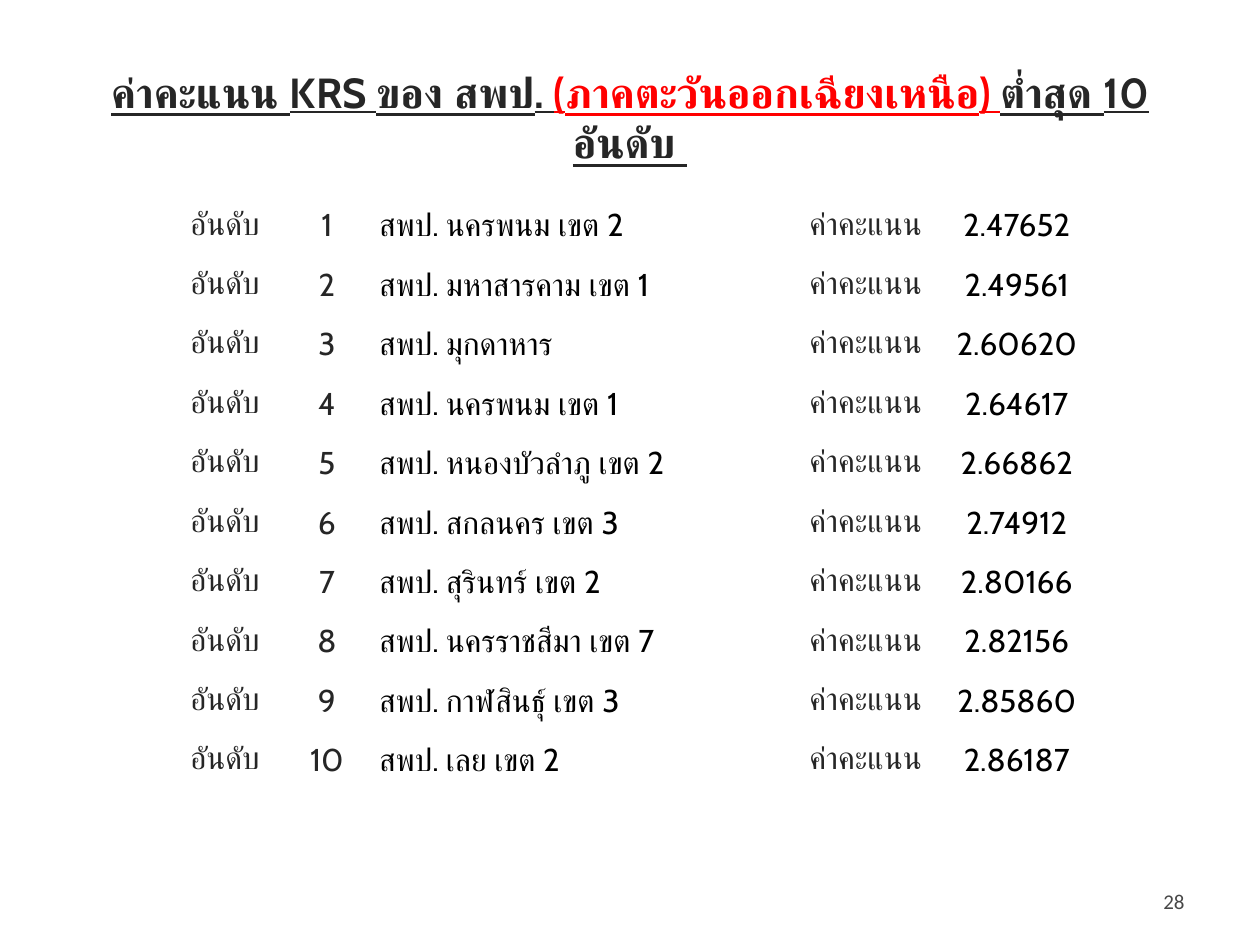
import pptx
import pptx.util
import pptx.dml.color
import pptx.enum.text

Inches = pptx.util.Inches
ALIGN = pptx.enum.text.PP_ALIGN
MIDDLE = pptx.enum.text.MSO_ANCHOR.MIDDLE

COLORS = {"dark": "262626", "black": "000000", "red": "FF0000", "grey": "474747"}

TITLE = [
    ("ค่าคะแนน KRS ของ สพป. ", "dark"),
    ("(ภาคตะวันออกเฉียงเหนือ) ", "red"),
    ("ต่ำสุด 10 อันดับ ", "dark"),
]
SCORES = [
    ("สพป. นครพนม เขต 2", "2.47652"),
    ("สพป. มหาสารคาม เขต 1", "2.49561"),
    ("สพป. มุกดาหาร", "2.60620"),
    ("สพป. นครพนม เขต 1", "2.64617"),
    ("สพป. หนองบัวลำภู เขต 2", "2.66862"),
    ("สพป. สกลนคร เขต 3", "2.74912"),
    ("สพป. สุรินทร์ เขต 2", "2.80166"),
    ("สพป. นครราชสีมา เขต 7", "2.82156"),
    ("สพป. กาฬสินธุ์ เขต 3", "2.85860"),
    ("สพป. เลย เขต 2", "2.86187"),
]
# Width, alignment and colour of each column
COLUMNS = [
    (0.81, ALIGN.CENTER, "dark"),
    (0.81, ALIGN.CENTER, "dark"),
    (3.27, ALIGN.LEFT, "black"),
    (1.2, ALIGN.CENTER, "dark"),
    (1.2, ALIGN.CENTER, "black"),
]


def style(run, size, color, face="Cabin"):
    run.font.name = face
    run.font.size = pptx.util.Pt(size)
    run.font.color.rgb = pptx.dml.color.RGBColor.from_string(COLORS[color])


def place(shape, box):
    shape.left, shape.top, shape.width, shape.height = map(Inches, box)


def add_title(slide, box):
    title = slide.shapes.title
    place(title, box)
    frame = title.text_frame
    frame.auto_size = pptx.enum.text.MSO_AUTO_SIZE.NONE
    frame.vertical_anchor = MIDDLE
    para = frame.paragraphs[0]
    para.alignment = ALIGN.CENTER
    for text, color in TITLE:
        run = para.add_run()
        run.text = text
        style(run, 24, color)
        run.font.bold = run.font.underline = True


def fill_cell(cell, text, align, color):
    cell.fill.background()
    cell.vertical_anchor = MIDDLE
    cell.margin_left = cell.margin_right = cell.margin_top = Inches(0.01)
    cell.margin_bottom = 0
    para = cell.text_frame.paragraphs[0]
    para.text = text
    para.alignment = align
    style(para.runs[0], 18, color)


def add_scores(slide, box):
    frame = slide.shapes.add_table(len(SCORES), len(COLUMNS), *map(Inches, box))
    table = frame.table
    table.first_row = table.horz_banding = False
    for col, (width, _, _) in zip(table.columns, COLUMNS):
        col.width = Inches(width)
    for rank, (area, score) in enumerate(SCORES, 1):
        texts = ("อันดับ", str(rank), area, "ค่าคะแนน", score)
        for cell, text, (_, align, color) in zip(table.rows[rank - 1].cells, texts, COLUMNS):
            fill_cell(cell, text, align, color)


def add_number(slide, box):
    frame = slide.shapes.add_textbox(*map(Inches, box)).text_frame
    frame.word_wrap = True
    frame.vertical_anchor = MIDDLE
    para = frame.paragraphs[0]
    para.text = "28"
    para.alignment = ALIGN.RIGHT
    style(para.runs[0], 12, "grey", "Calibri")


def main():
    deck = pptx.Presentation()
    deck.slide_width, deck.slide_height = Inches(10), Inches(7.5)
    slide = deck.slides.add_slide(deck.slide_layouts.get_by_name("Title Only"))
    add_title(slide, (0.5, 0.3, 9, 1.25))
    add_number(slide, (7.17, 6.95, 2.33, 0.4))
    add_scores(slide, (1.38, 1.55, 7.29, 4.72))
    deck.save("out.pptx")


if __name__ == "__main__":
    main()
